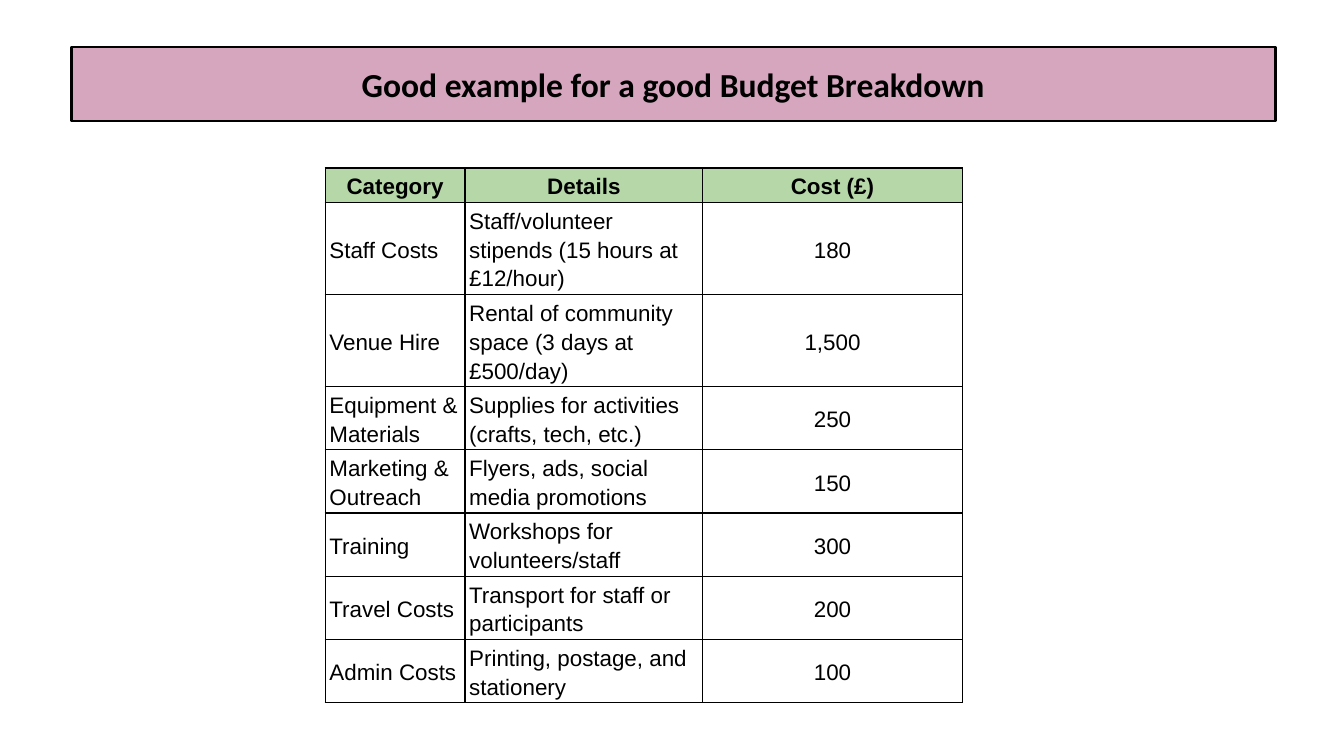
from lxml.etree import SubElement
from pptx import Presentation
from pptx.dml.color import RGBColor
from pptx.enum.text import MSO_ANCHOR, PP_ALIGN
from pptx.oxml.ns import qn
from pptx.util import Inches, Pt

WIDE = 10
HIGH = WIDE * 9 / 16
COLORS = {"ink": "000000", "band": "D5A6BD", "head": "B6D7A8"}
TITLE = "Good example for a good Budget Breakdown"
ROWS = [
    ("Category", "Details", "Cost (£)"),
    ("Staff Costs", "Staff/volunteer stipends (15 hours at £12/hour)", "180"),
    ("Venue Hire", "Rental of community space (3 days at £500/day)", "1,500"),
    ("Equipment & Materials", "Supplies for activities (crafts, tech, etc.)", "250"),
    ("Marketing & Outreach", "Flyers, ads, social media promotions", "150"),
    ("Training", "Workshops for volunteers/staff", "300"),
    ("Travel Costs", "Transport for staff or participants", "200"),
    ("Admin Costs", "Printing, postage, and stationery", "100"),
]
COLS = (1.04, 1.77, 1.93)
HEAD_ROW, BODY_ROW = 0.22, 0.39


def color(name):
    """Return a palette colour."""
    return RGBColor.from_string(COLORS[name])


def style(para, face, size, bold, align):
    """Format one paragraph."""
    para.alignment = align
    font = para.font
    font.name, font.size, font.bold = face, Pt(size), bold
    font.color.rgb = color("ink")


def border(cell):
    """Rule all four sides of a cell."""
    props = cell._tc.get_or_add_tcPr()
    for side in ("lnL", "lnR", "lnT", "lnB"):
        line = SubElement(props, qn(f"a:{side}"), w=str(Pt(0.75)))
        fill = SubElement(line, qn("a:solidFill"))
        SubElement(fill, qn("a:srgbClr"), val=COLORS["ink"])


def draw_title(slide, box):
    """Place the title band in its box."""
    band = slide.shapes.title
    band.left, band.top, band.width, band.height = map(Inches, box)
    band.fill.solid()
    band.fill.fore_color.rgb = color("band")
    band.line.color.rgb = color("ink")
    band.line.width = Pt(1.5)
    frame = band.text_frame
    frame.text = TITLE
    frame.word_wrap = True
    frame.vertical_anchor = MSO_ANCHOR.MIDDLE
    frame.margin_left = frame.margin_right = Inches(0.1)
    frame.margin_top = frame.margin_bottom = Inches(0.1)
    style(frame.paragraphs[0], "Calibri", 18, True, PP_ALIGN.CENTER)


def fill_cell(cell, text, head, center):
    """Write and format one table cell."""
    cell.text = text
    cell.margin_left = cell.margin_right = Pt(2.25)
    cell.margin_top = cell.margin_bottom = Pt(1.5)
    cell.vertical_anchor = MSO_ANCHOR.BOTTOM if head else MSO_ANCHOR.MIDDLE
    para = cell.text_frame.paragraphs[0]
    para.line_spacing = 1.15
    style(para, "Arial", 12, head, PP_ALIGN.CENTER if center else PP_ALIGN.LEFT)
    border(cell)
    if head:
        cell.fill.solid()
        cell.fill.fore_color.rgb = color("head")
    else:
        cell.fill.background()


def draw_budget(slide, box):
    """Place the budget table in its box."""
    frame = slide.shapes.add_table(len(ROWS), len(COLS), *map(Inches, box))
    table = frame.table
    table.horz_banding = False
    for col, share in zip(table.columns, COLS):
        col.width = Inches(box[2] * share / sum(COLS))
    for i, texts in enumerate(ROWS):
        table.rows[i].height = Inches(BODY_ROW if i else HEAD_ROW)
        for j, text in enumerate(texts):
            fill_cell(table.cell(i, j), text, i == 0, i == 0 or j == 2)


def main():
    """Build and save the slide."""
    deck = Presentation()
    deck.slide_width, deck.slide_height = Inches(WIDE), Inches(HIGH)
    slide = deck.slides.add_slide(deck.slide_layouts[5])
    tall = HEAD_ROW + BODY_ROW * (len(ROWS) - 1)
    draw_budget(slide, (2.42, 1.25, sum(COLS), tall))
    draw_title(slide, (0.53, 0.35, 8.96, 0.55))
    deck.save("out.pptx")


if __name__ == "__main__":
    main()
